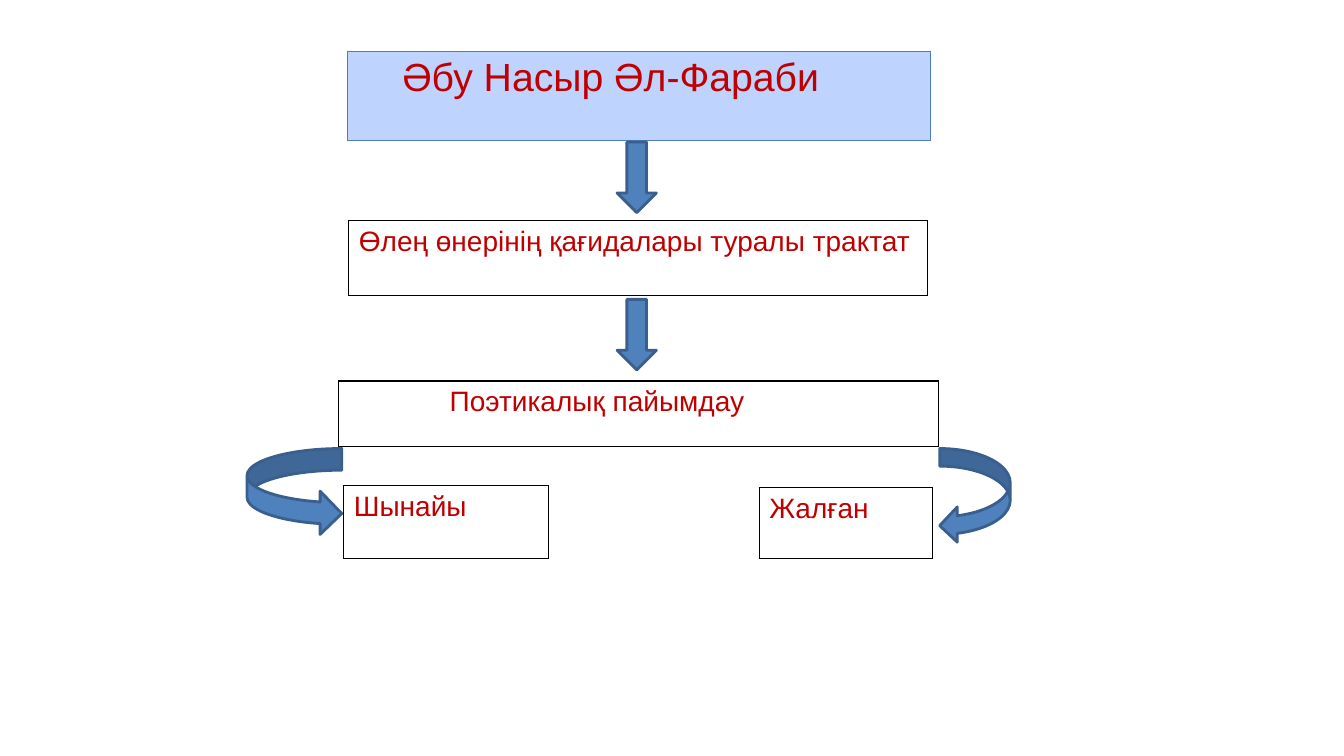
from dataclasses import dataclass

from lxml.etree import SubElement
from pptx import Presentation
from pptx.dml.color import RGBColor
from pptx.enum.shapes import MSO_SHAPE as Preset
from pptx.oxml.ns import qn
from pptx.util import Emu, Pt

EMU_PER_PX = 9144  # 100 px to the inch


def px(length):
    return Emu(length * EMU_PER_PX)


@dataclass(frozen=True)
class Theme:
    font: str = "Arial"
    title_size: int = 28
    text_size: int = 20
    text: str = "C00000"
    title_fill: str = "BFD3FF"
    title_border: str = "4B7EBC"
    border: str = "000000"
    arrow_fill: str = "4F81BD"
    arrow_line: str = "3A5F8C"
    arrow_width: int = 2


class Diagram:
    def __init__(self, slide, theme):
        self.shapes = slide.shapes
        self.theme = theme

    def box(self, text, left, top, width, height, indent=0, size=None,
            fill=None, border=None, weight=1):
        """Add a one-cell table holding one line of text."""
        theme = self.theme
        frame = self.shapes.add_table(1, 1, *map(px, (left, top, width, height)))
        frame.table.first_row = frame.table.horz_banding = False
        cell = frame.table.cell(0, 0)
        self.borders(cell, border or theme.border, weight)
        if fill:
            cell.fill.solid()
            cell.fill.fore_color.rgb = RGBColor.from_string(fill)
        else:
            cell.fill.background()
        cell.margin_left = px(10 + indent)
        run = cell.text_frame.paragraphs[0].add_run()
        run.text = text
        run.font.color.rgb = RGBColor.from_string(theme.text)
        font_format = {"name": theme.font, "size": Pt(size or theme.text_size),
                       "bold": False}
        for attribute, value in font_format.items():
            setattr(run.font, attribute, value)

    def borders(self, cell, color, weight):
        properties = cell._tc.get_or_add_tcPr()
        for side in ("lnL", "lnR", "lnT", "lnB"):
            line = SubElement(properties, qn(f"a:{side}"), w=str(Pt(weight)))
            solid = SubElement(line, qn("a:solidFill"))
            SubElement(solid, qn("a:srgbClr"), val=color)

    def arrow(self, preset, left, top, width, height):
        theme = self.theme
        arrow = self.shapes.add_shape(preset, *map(px, (left, top, width, height)))
        arrow.shadow.inherit = False
        arrow.fill.solid()
        arrow.fill.fore_color.rgb = RGBColor.from_string(theme.arrow_fill)
        arrow.line.color.rgb = RGBColor.from_string(theme.arrow_line)
        arrow.line.width = Pt(theme.arrow_width)


def main():
    presentation = Presentation()
    presentation.slide_width, presentation.slide_height = px(1333), px(750)
    theme = Theme()
    slide = presentation.slides.add_slide(presentation.slide_layouts[6])
    diagram = Diagram(slide, theme)

    # Author, treatise and poetic judgement, from top to bottom
    diagram.box("Әбу Насыр Әл-Фараби", 345, 51, 578, 88, indent=44,
                size=theme.title_size, fill=theme.title_fill,
                border=theme.title_border, weight=0.75)
    diagram.box("Өлең өнерінің қағидалары туралы трактат", 346, 219, 574, 74)
    diagram.box("Поэтикалық пайымдау", 336, 378, 595, 65, indent=100)
    for arrow_top in (141, 297):
        diagram.arrow(Preset.DOWN_ARROW, 612, arrow_top, 39, 70)

    # Two kinds of judgement: true and false
    diagram.arrow(Preset.CURVED_RIGHT_ARROW, 245, 445, 94, 86)
    diagram.arrow(Preset.CURVED_LEFT_ARROW, 932, 445, 70, 94)
    diagram.box("Шынайы", 341, 482, 203, 72)
    diagram.box("Жалған", 753, 484, 172, 70)

    presentation.save("out.pptx")


if __name__ == "__main__":
    main()
